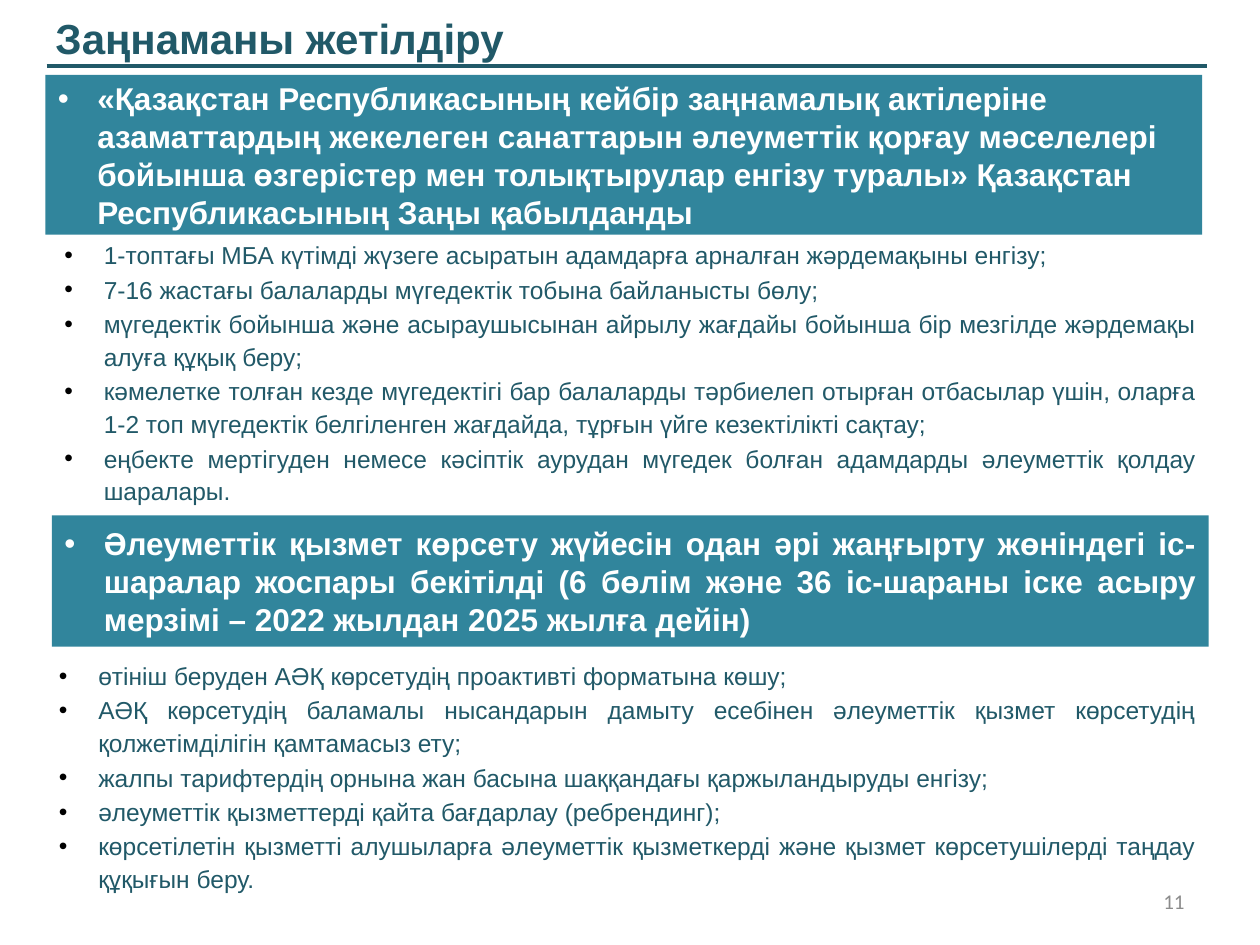
import pptx
import pptx.util
import pptx.dml.color
import pptx.enum.shapes
import pptx.enum.text
import pptx.oxml.ns
import lxml.etree

Pt = pptx.util.Pt
ALIGN = pptx.enum.text.PP_ALIGN
ANCHOR = pptx.enum.text.MSO_ANCHOR
DARK, TEAL, WHITE, BLACK, GRAY = "215968", "31859C", "FFFFFF", "000000", "8C8C8C"


def color(value):
    return pptx.dml.color.RGBColor.from_string(value)


def write(paragraph, text, size, font_color, bold=False, align=ALIGN.LEFT, bullet=None, name="Arial"):
    paragraph.text = text
    paragraph.alignment = align
    if bullet:
        properties = paragraph._p.get_or_add_pPr()
        properties.set("marL", str(Pt(22.5)))
        properties.set("indent", str(-Pt(22.5)))
        qn = pptx.oxml.ns.qn
        bullet_color = lxml.etree.SubElement(properties, qn("a:buClr"))
        lxml.etree.SubElement(bullet_color, qn("a:srgbClr"), val=bullet)
        lxml.etree.SubElement(properties, qn("a:buFont"), typeface="Arial")
        lxml.etree.SubElement(properties, qn("a:buChar"), char="•")
    font = paragraph.font
    font.name, font.size, font.bold = name, Pt(size), bold
    font.color.rgb = color(font_color)


presentation = pptx.Presentation()
presentation.slide_width, presentation.slide_height = Pt(720), Pt(540)
slide = presentation.slides.add_slide(presentation.slide_layouts[5])
shapes = slide.shapes

title = shapes.title
title.left, title.top, title.width, title.height = Pt(24.5), Pt(3.6), Pt(273), Pt(36)
title.text_frame.word_wrap = False
title.text_frame.auto_size = pptx.enum.text.MSO_AUTO_SIZE.NONE
write(title.text_frame.paragraphs[0], "Заңнаманы жетілдіру", 24, DARK, bold=True)

rule = shapes.add_connector(pptx.enum.shapes.MSO_CONNECTOR.STRAIGHT, Pt(26.6), Pt(37.6), Pt(690), Pt(37.6))
rule.line.color.rgb = color(DARK)
rule.line.width = Pt(2.25)
lxml.etree.SubElement(rule._element.spPr, pptx.oxml.ns.qn("a:effectLst"))

banners = [
    (26, 42.8, 91.4, ALIGN.LEFT,
     "«Қазақстан Республикасының кейбір заңнамалық актілеріне азаматтардың жекелеген санаттарын "
     "әлеуметтік қорғау мәселелері бойынша өзгерістер мен толықтырулар енгізу туралы» Қазақстан "
     "Республикасының Заңы қабылданды"),
    (29.7, 294.5, 75, ALIGN.JUSTIFY,
     "Әлеуметтік қызмет көрсету жүйесін одан әрі жаңғырту жөніндегі іс-шаралар жоспары бекітілді "
     "(6 бөлім және 36 іс-шараны іске асыру мерзімі – 2022 жылдан 2025 жылға дейін)"),
]
for left, top, height, align, text in banners:
    banner = shapes.add_shape(pptx.enum.shapes.MSO_SHAPE.RECTANGLE, Pt(left), Pt(top), Pt(661), Pt(height))
    banner.shadow.inherit = False
    banner.fill.solid()
    banner.fill.fore_color.rgb = color(TEAL)
    banner.line.fill.background()
    banner.text_frame.word_wrap = True
    banner.text_frame.vertical_anchor = ANCHOR.MIDDLE
    write(banner.text_frame.paragraphs[0], text, 18, WHITE, True, align, WHITE)

measure_lists = [
    (29.7, 131.8, 661, 164, [
        "1-топтағы МБА күтімді жүзеге асыратын адамдарға арналған жәрдемақыны енгізу;",
        "7-16 жастағы балаларды мүгедектік тобына байланысты бөлу;",
        "мүгедектік бойынша және асыраушысынан айрылу жағдайы бойынша бір мезгілде жәрдемақы алуға құқық беру;",
        "кәмелетке толған кезде мүгедектігі бар балаларды тәрбиелеп отырған отбасылар үшін, оларға "
        "1-2 топ мүгедектік белгіленген жағдайда, тұрғын үйге кезектілікті сақтау;",
        "еңбекте мертігуден немесе кәсіптік аурудан мүгедек болған адамдарды әлеуметтік қолдау шаралары.",
    ]),
    (26.6, 372.2, 664, 145.4, [
        "өтініш беруден АӘҚ көрсетудің проактивті форматына көшу;",
        "АӘҚ көрсетудің баламалы нысандарын дамыту есебінен әлеуметтік қызмет көрсетудің "
        "қолжетімділігін қамтамасыз ету;",
        "жалпы тарифтердің орнына жан басына шаққандағы қаржыландыруды енгізу;",
        "әлеуметтік қызметтерді қайта бағдарлау (ребрендинг);",
        "көрсетілетін қызметті алушыларға әлеуметтік қызметкерді және қызмет көрсетушілерді таңдау құқығын беру.",
    ]),
]
for left, top, width, height, measures in measure_lists:
    frame = shapes.add_textbox(Pt(left), Pt(top), Pt(width), Pt(height)).text_frame
    frame.word_wrap = True
    for index, measure in enumerate(measures):
        paragraph = frame.add_paragraph() if index else frame.paragraphs[0]
        paragraph.line_spacing = 1.12
        paragraph.space_after = Pt(0.8)
        write(paragraph, measure, 14, DARK, align=ALIGN.JUSTIFY, bullet=BLACK)

page_frame = shapes.add_textbox(Pt(516), Pt(500.5), Pt(168), Pt(28.8)).text_frame
page_frame.word_wrap = True
page_frame.vertical_anchor = ANCHOR.MIDDLE
write(page_frame.paragraphs[0], "11", 12, GRAY, align=ALIGN.RIGHT, name="Calibri")

presentation.save("out.pptx")
